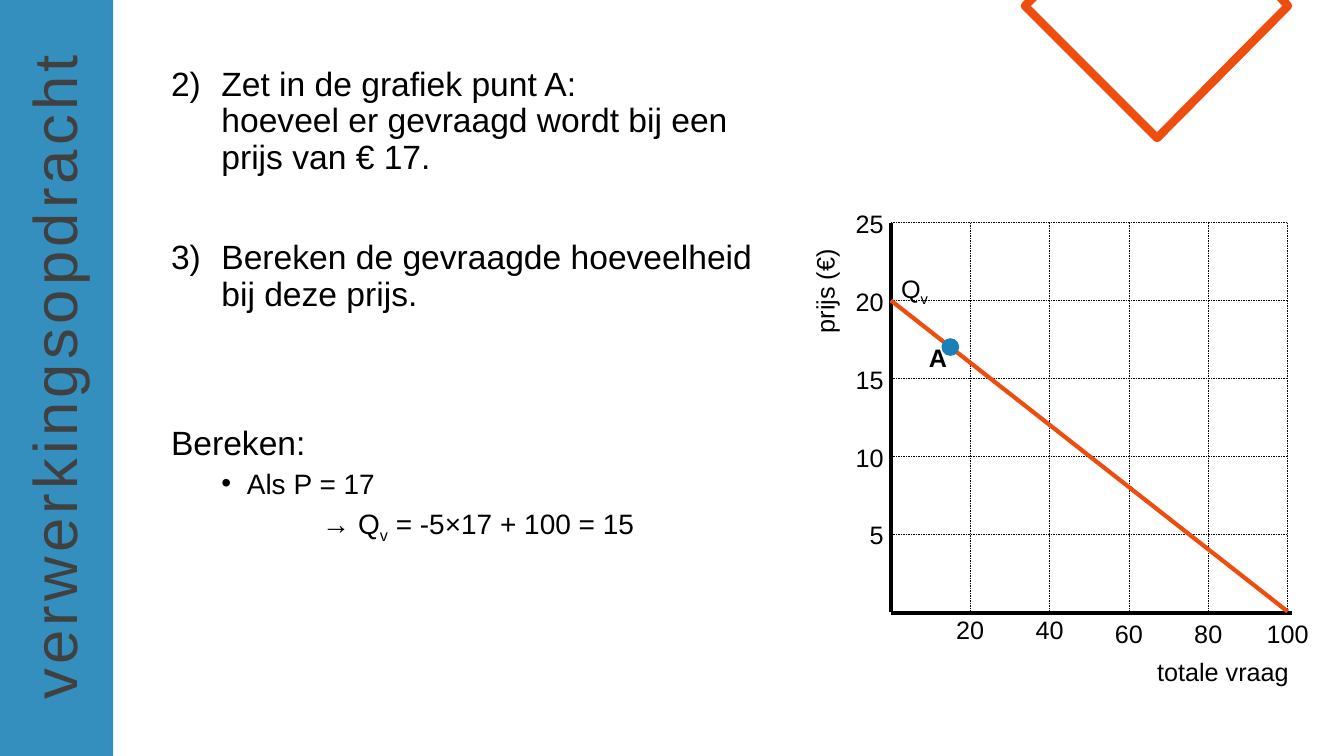
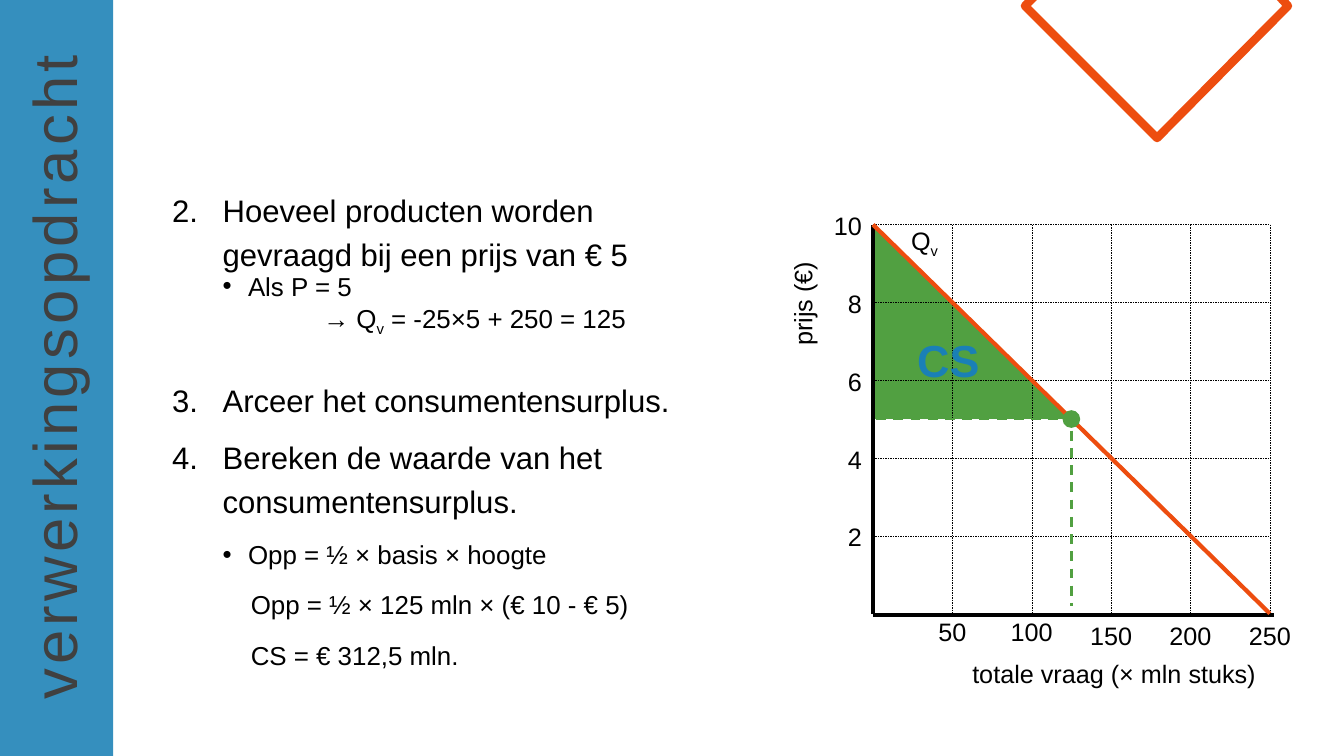
from dataclasses import dataclass

from lxml import etree
from pptx import Presentation
from pptx.dml.color import RGBColor
from pptx.enum.dml import MSO_LINE, MSO_PATTERN
from pptx.enum.shapes import MSO_CONNECTOR, MSO_SHAPE
from pptx.enum.text import MSO_ANCHOR, MSO_AUTO_SIZE, PP_ALIGN
from pptx.oxml.ns import qn
from pptx.util import Cm, Pt

DASH = MSO_LINE.DASH
DARK_VERTICAL = MSO_PATTERN.DARK_VERTICAL
STRAIGHT = MSO_CONNECTOR.STRAIGHT
RECTANGLE, OVAL = MSO_SHAPE.RECTANGLE, MSO_SHAPE.OVAL
TOP, MIDDLE = MSO_ANCHOR.TOP, MSO_ANCHOR.MIDDLE
NO_AUTOFIT = MSO_AUTO_SIZE.NONE
LEFT, CENTER, RIGHT = PP_ALIGN.LEFT, PP_ALIGN.CENTER, PP_ALIGN.RIGHT


@dataclass(frozen=True)
class Theme:
    font: str = "Arial"
    black: str = "000000"
    white: str = "FFFFFF"
    gray: str = "404040"
    blue: str = "1A80B6"
    orange: str = "ED4D0F"
    green: str = "51A041"
    title_size: float = 44
    label_size: float = 18
    area_size: float = 32


THEME = Theme()
COLUMNS = ROWS = 5
COLUMN_WIDTH, ROW_HEIGHT = 2.0, 1.96
PLOT_WIDTH, PLOT_HEIGHT = COLUMNS * COLUMN_WIDTH, ROWS * ROW_HEIGHT
TICK_DROPS = (0.46, 0.46, 0.54, 0.54, 0.54)


@dataclass(frozen=True)
class Item:
    text: str
    size: float
    spacing: float
    before: float
    level: int = 0
    indent: float = 1.27
    hanging: float = 0
    bullet: str = ""
    start: int = 0


@dataclass(frozen=True)
class Plot:
    left: float
    top: float
    x_max: float
    y_max: float
    tick_gap: float
    x_title: str
    x_title_right: float
    y_title_x: float
    y_title_y: float

    def locate(self, x: float, y: float) -> tuple[float, float]:
        return (self.left + x / self.x_max * PLOT_WIDTH,
                self.top + (1 - y / self.y_max) * PLOT_HEIGHT)


def color(value: str) -> RGBColor:
    return RGBColor.from_string(value)


def write_text(para, text: str, *, size: float = THEME.label_size, ink: str = THEME.black,
               bold: bool = False, tracking: int = 0) -> None:
    for index, part in enumerate(text.split("|")):
        for number, line in enumerate(part.split("\n")):
            if number:
                para.add_line_break()
            span = para.add_run()
            span.text = line
            span.font.name = THEME.font
            span.font.size = Pt(size)
            span.font.bold = bold
            span.font.color.rgb = color(ink)
            properties = span.font._element
            if index % 2:
                properties.set("baseline", "-25000")
            if tracking:
                properties.set("spc", str(tracking))


def prepare_frame(frame, anchor, margin_x: float, margin_y: float) -> None:
    frame.word_wrap = True
    frame.auto_size = NO_AUTOFIT
    frame.vertical_anchor = anchor
    frame.margin_left = frame.margin_right = Cm(margin_x)
    frame.margin_top = frame.margin_bottom = Cm(margin_y)


def add_label(page, text: str, x: float, y: float, *, width: float = 2, height: float = 1,
              align=CENTER, rotation: float = 0, **format) -> None:
    shift = {LEFT: 0, CENTER: width / 2, RIGHT: width}[align]
    box = page.shapes.add_textbox(Cm(x - shift), Cm(y - height / 2), Cm(width), Cm(height))
    box.rotation = rotation
    prepare_frame(box.text_frame, MIDDLE, 0, 0)
    para = box.text_frame.paragraphs[0]
    para.alignment = align
    write_text(para, text, **format)


def add_line(page, start: tuple[float, float], end: tuple[float, float], *,
             ink: str = THEME.black, width: float = 3, dash=None) -> None:
    line = page.shapes.add_connector(STRAIGHT, *(Cm(value) for value in (*start, *end)))
    line.line.color.rgb = color(ink)
    line.line.width = Pt(width)
    if dash:
        line.line.dash_style = dash
    etree.SubElement(line.element.spPr, qn("a:effectLst"))


def add_outline(page, points: list[tuple[float, float]]):
    builder = page.shapes.build_freeform(Cm(points[0][0]), Cm(points[0][1]), scale=1.0)
    builder.add_line_segments([(Cm(x), Cm(y)) for x, y in points[1:]], close=True)
    outline = builder.convert_to_shape()
    outline.shadow.inherit = False
    return outline


def add_point(page, x: float, y: float, ink: str) -> None:
    size = 0.41
    point = page.shapes.add_shape(OVAL, Cm(x - size / 2), Cm(y - size / 2), Cm(size), Cm(size))
    point.shadow.inherit = False
    point.fill.solid()
    point.fill.fore_color.rgb = point.line.color.rgb = color(ink)
    point.line.width = Pt(1)


def decorate_layout(layout, page) -> None:
    band = page.shapes.add_shape(RECTANGLE, 0, 0, Cm(2.85), Cm(19.05))
    band.shadow.inherit = False
    band.fill.solid()
    band.fill.fore_color.rgb = color(THEME.blue)
    band.line.fill.background()
    fill_color = band.element.spPr.find(qn("a:solidFill"))[0]
    etree.SubElement(fill_color, qn("a:alpha")).set("val", "88000")

    diamond = add_outline(page, [(26.16, -0.18), (32.16, -0.18), (32.46, 0.15),
                                 (29.16, 3.48), (25.83, 0.15)])
    diamond.fill.background()
    diamond.line.color.rgb = color(THEME.orange)
    diamond.line.width = Pt(6)

    for number, shape in enumerate((diamond, band), start=20):
        shape.element.xpath("./p:nvSpPr/p:cNvPr")[0].set("id", str(number))
        layout.shapes.element.append(shape.element)


def fill_title(page, text: str) -> None:
    title = page.shapes.title
    length, thickness = 18, 2.13
    title.left, title.top = Cm(1.32 - length / 2), Cm(8.88 - thickness / 2)
    title.width, title.height = Cm(length), Cm(thickness)
    title.rotation = 270
    prepare_frame(title.text_frame, MIDDLE, 0.25, 0.13)
    para = title.text_frame.paragraphs[0]
    para.alignment = LEFT
    write_text(para, text, size=THEME.title_size, ink=THEME.gray, tracking=300)


def set_bullet(para, item: Item) -> None:
    properties = para._p.get_or_add_pPr()
    properties.set("marL", str(Cm(item.indent)))
    properties.set("indent", str(Cm(-item.hanging)))
    if item.start:
        bullet = etree.SubElement(properties, qn("a:buAutoNum"))
        bullet.set("type", item.bullet)
        bullet.set("startAt", str(item.start))
    elif item.bullet:
        etree.SubElement(properties, qn("a:buFont")).set("typeface", THEME.font)
        etree.SubElement(properties, qn("a:buChar")).set("char", item.bullet)
    else:
        etree.SubElement(properties, qn("a:buNone"))


def fill_body(page, bounds: tuple[float, float, float, float], items: list[Item]) -> None:
    body = page.placeholders[1]
    body.left, body.top, body.width, body.height = (Cm(value) for value in bounds)
    frame = body.text_frame
    prepare_frame(frame, TOP, 0.25, 0.13)
    for index, item in enumerate(items):
        para = frame.add_paragraph() if index else frame.paragraphs[0]
        para.level = item.level
        para.alignment = LEFT
        para.line_spacing = item.spacing
        para.space_before = Pt(item.before)
        para.space_after = Pt(0)
        set_bullet(para, item)
        write_text(para, item.text, size=item.size)


def draw_plot(page, plot: Plot) -> None:
    right, bottom = plot.left + PLOT_WIDTH, plot.top + PLOT_HEIGHT
    add_line(page, (plot.left, plot.top), (plot.left, bottom))
    for row in range(ROWS):
        y = plot.top + row * ROW_HEIGHT
        add_line(page, (plot.left, y), (right, y), width=0.25, dash=DASH)
        add_label(page, f"{plot.y_max * (ROWS - row) / ROWS:g}",
                  plot.left - plot.tick_gap, y + 0.03, align=RIGHT)
    for column, drop in enumerate(TICK_DROPS, start=1):
        x = plot.left + column * COLUMN_WIDTH
        add_line(page, (x, plot.top), (x, bottom), width=0.25, dash=DASH)
        add_label(page, f"{plot.x_max * column / COLUMNS:g}", x, bottom + drop)
    add_label(page, plot.x_title, plot.x_title_right, bottom + 1.5, width=8, align=RIGHT)
    add_label(page, "prijs (€)", plot.y_title_x, plot.y_title_y, width=3, rotation=270)
    add_line(page, (plot.left, bottom + 0.03), (right + 0.1, bottom + 0.03))
    add_line(page, plot.locate(0, plot.y_max if plot.y_max == 10 else 20),
             plot.locate(plot.x_max, 0), ink=THEME.orange)


def numbered(text: str, size: float, spacing: float, style: str, before: float = 10) -> Item:
    return Item(text, size, spacing, before, hanging=1.27, bullet=style, start=2)


def bulleted(text: str, size: float, spacing: float) -> Item:
    return Item(text, size, spacing, 5, level=1, indent=1.91, hanging=0.64, bullet="•")


def plain(text: str, size: float, spacing: float, indent: float) -> Item:
    return Item(text, size, spacing, 5, level=1, indent=indent)


def fill_demand_page(page) -> None:
    style = "arabicParenR"
    fill_body(page, (4.06, 1.57, 15.6, 16.74), [
        numbered("Zet in de grafiek punt A:\nhoeveel er gevraagd wordt bij een prijs van € 17.",
                 24, 0.9, style),
        numbered("Bereken de gevraagde hoeveelheid bij deze prijs.", 24, 0.9, style, before=46),
        Item("Bereken:", 24, 0.9, 81, indent=0),
        bulleted("Als P = 17", 20, 0.9),
        plain("→ Q|v| = -5×17 + 100 = 15", 20, 0.9, 3.81),
    ])
    plot = Plot(22.45, 5.61, 100, 25, 0.18, "totale vraag", 32.48, 20.78, 7.34)
    draw_plot(page, plot)
    add_label(page, "Q|v|", 22.71, 7.32, align=LEFT)
    add_point(page, *plot.locate(15, 17), THEME.blue)
    add_label(page, "A", 23.64, 9.0, bold=True)


def fill_surplus_page(page) -> None:
    style, leading = "arabicPeriod", Pt(31)
    fill_body(page, (4.09, 4.55, 14.25, 12.67), [
        numbered("Hoeveel producten worden gevraagd bij een prijs van € 5", 22.2, leading, style),
        bulleted("Als P = 5", 18.5, 0.7),
        plain("→ Q|v| = -25×5 + 250 = 125", 18.5, 0.7, 3.81),
        numbered("Arceer het consumentensurplus.", 22.2, leading, style, before=30),
        numbered("Bereken de waarde van het consumentensurplus.", 22.2, leading, style),
        bulleted("Opp = ½ × basis × hoogte", 18.5, leading),
        plain("Opp = ½ × 125 mln × (€ 10 - € 5)", 18.5, leading, 1.98),
        plain("CS = € 312,5 mln.", 18.5, leading, 1.98),
    ])
    plot = Plot(22.0, 5.66, 250, 10, 0.28, "totale vraag (× mln stuks)", 31.65, 20.22, 7.65)
    surplus = add_outline(page, [plot.locate(0, 10), plot.locate(0, 5), plot.locate(125, 5)])
    surplus.fill.patterned()
    surplus.fill.pattern = DARK_VERTICAL
    surplus.fill.fore_color.rgb = color(THEME.green)
    surplus.fill.back_color.rgb = color(THEME.white)
    surplus.line.fill.background()
    draw_plot(page, plot)
    add_label(page, "Q|v|", 22.96, 6.1, align=LEFT)
    add_point(page, *plot.locate(125, 5), THEME.green)
    for start, end in (((2, 5), (122, 5)), ((125, 4.7), (125, 0.2))):
        add_line(page, plot.locate(*start), plot.locate(*end),
                 ink=THEME.green, width=1.75, dash=DASH)
    add_label(page, "CS", 23.9, 9.07, height=1.6, size=THEME.area_size,
              ink=THEME.blue, bold=True)


def main() -> None:
    deck = Presentation()
    deck.slide_width, deck.slide_height = Cm(33.87), Cm(19.05)
    layout = deck.slide_layouts[1]
    for index, fill_page in enumerate((fill_demand_page, fill_surplus_page)):
        page = deck.slides.add_slide(layout)
        if index == 0:
            decorate_layout(layout, page)
        fill_title(page, "verwerkingsopdracht")
        fill_page(page)
    deck.save("out.pptx")


if __name__ == "__main__":
    main()
